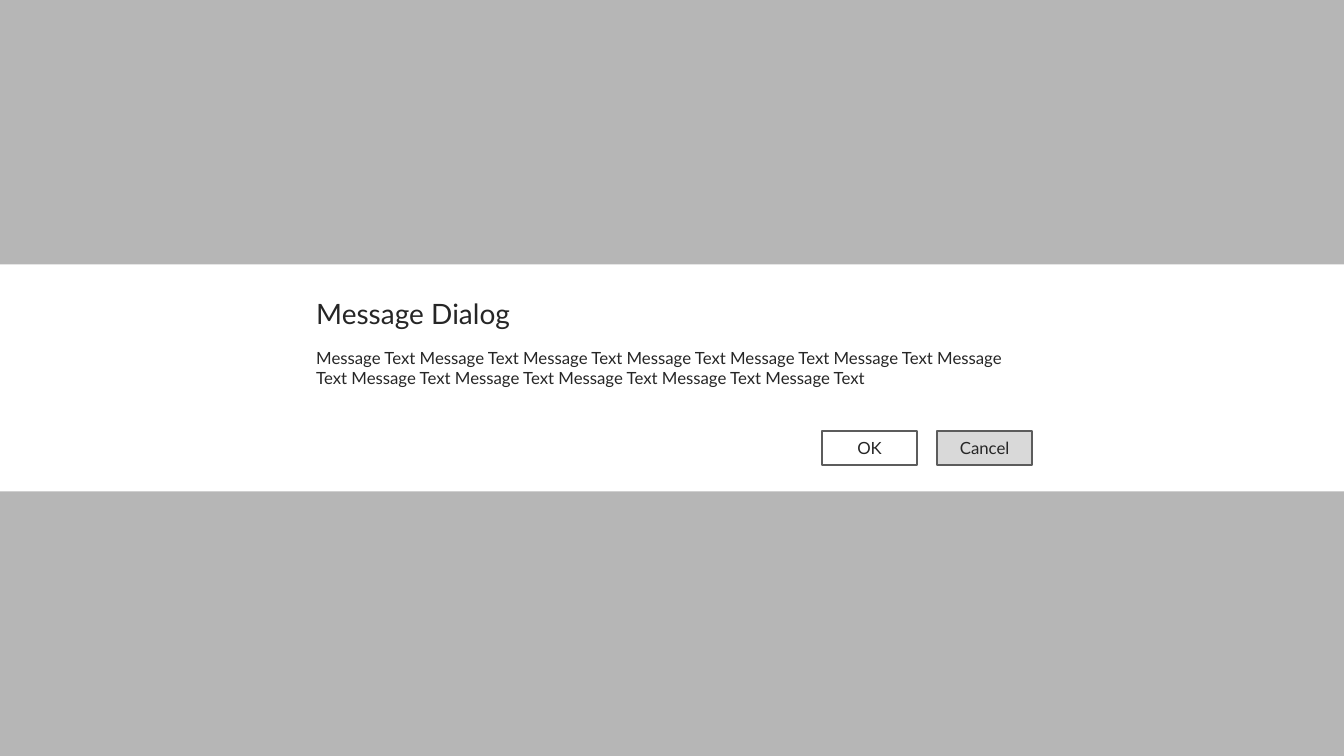
from lxml import etree
from pptx import Presentation
from pptx.dml.color import RGBColor
from pptx.enum.shapes import MSO_SHAPE
from pptx.enum.text import MSO_ANCHOR, MSO_AUTO_SIZE, PP_ALIGN
from pptx.oxml.ns import qn
from pptx.util import Cm, Pt

RECTANGLE = MSO_SHAPE.RECTANGLE
MIDDLE = MSO_ANCHOR.MIDDLE
LEFT, CENTER = PP_ALIGN.LEFT, PP_ALIGN.CENTER
GROW = MSO_AUTO_SIZE.SHAPE_TO_FIT_TEXT

COLORS = {
    "page": "ECEEEE",
    "overlay": "929292",
    "white": "FFFFFF",
    "default": "D9D9D9",
    "border": "5C5C5C",
    "text": "262626",
}
FONT = "Lato"
PAGE_WIDTH, PAGE_HEIGHT = 33.87, 19.05
BAND_HEIGHT = 5.72
CONTENT_LEFT, CONTENT_WIDTH = 7.87, 18.14
BUTTON_WIDTH, BUTTON_HEIGHT, BUTTON_GAP = 2.39, 0.84, 0.51
BUTTON_TOP = 10.87


def color(name):
    return RGBColor.from_string(COLORS[name])


def write_text(frame, text, size=12, align=LEFT, margin=0.1):
    frame.word_wrap = True
    frame.margin_left = frame.margin_right = Cm(margin)
    frame.margin_top = frame.margin_bottom = Cm(margin)
    para = frame.paragraphs[0]
    para.alignment = align
    span = para.add_run()
    span.text = text
    span.font.name = FONT
    span.font.size = Pt(size)
    span.font.color.rgb = color("text")


class DialogPage:
    """Holds the current slide and draws the dialog's elements on it, in centimetres."""

    def __init__(self, deck):
        self.slide = deck.slides.add_slide(deck.slide_layouts[6])
        background = self.slide.background.fill
        background.solid()
        background.fore_color.rgb = color("page")

    def panel(self, left, top, width, height, fill, border=None, opacity=100):
        box = self.slide.shapes.add_shape(
            RECTANGLE, Cm(left), Cm(top), Cm(width), Cm(height))
        box.shadow.inherit = False
        box.fill.solid()
        box.fill.fore_color.rgb = color(fill)
        if opacity < 100:
            fill_color = box.fill._xPr.find(qn("a:solidFill"))[0]
            etree.SubElement(fill_color, qn("a:alpha"), val=str(opacity * 1000))
        if border:
            box.line.color.rgb = color(border)
            box.line.width = Pt(1.5)
        else:
            box.line.fill.background()
        return box

    def label(self, top, height, text, size=12):
        box = self.slide.shapes.add_textbox(
            Cm(CONTENT_LEFT), Cm(top), Cm(CONTENT_WIDTH), Cm(height))
        write_text(box.text_frame, text, size=size)
        box.text_frame.auto_size = GROW

    def button(self, left, text, fill):
        box = self.panel(left, BUTTON_TOP, BUTTON_WIDTH, BUTTON_HEIGHT, fill, border="border")
        box.text_frame.vertical_anchor = MIDDLE
        write_text(box.text_frame, text, align=CENTER, margin=0.13)


def main():
    deck = Presentation()
    deck.slide_width, deck.slide_height = Cm(PAGE_WIDTH), Cm(PAGE_HEIGHT)
    page = DialogPage(deck)

    page.panel(0, 0, PAGE_WIDTH, PAGE_HEIGHT, "overlay", opacity=60)
    page.panel(0, (PAGE_HEIGHT - BAND_HEIGHT) / 2, PAGE_WIDTH, BAND_HEIGHT, "white")
    page.label(7.37, 1.04, "Message Dialog", size=20)
    page.label(8.66, 1.22, " ".join(["Message Text"] * 12))

    # Buttons run leftwards from the right edge of the content.
    right = CONTENT_LEFT + CONTENT_WIDTH
    for text, fill in (("Cancel", "default"), ("OK", "white")):
        page.button(right - BUTTON_WIDTH, text, fill)
        right -= BUTTON_WIDTH + BUTTON_GAP

    deck.save("out.pptx")


if __name__ == "__main__":
    main()
